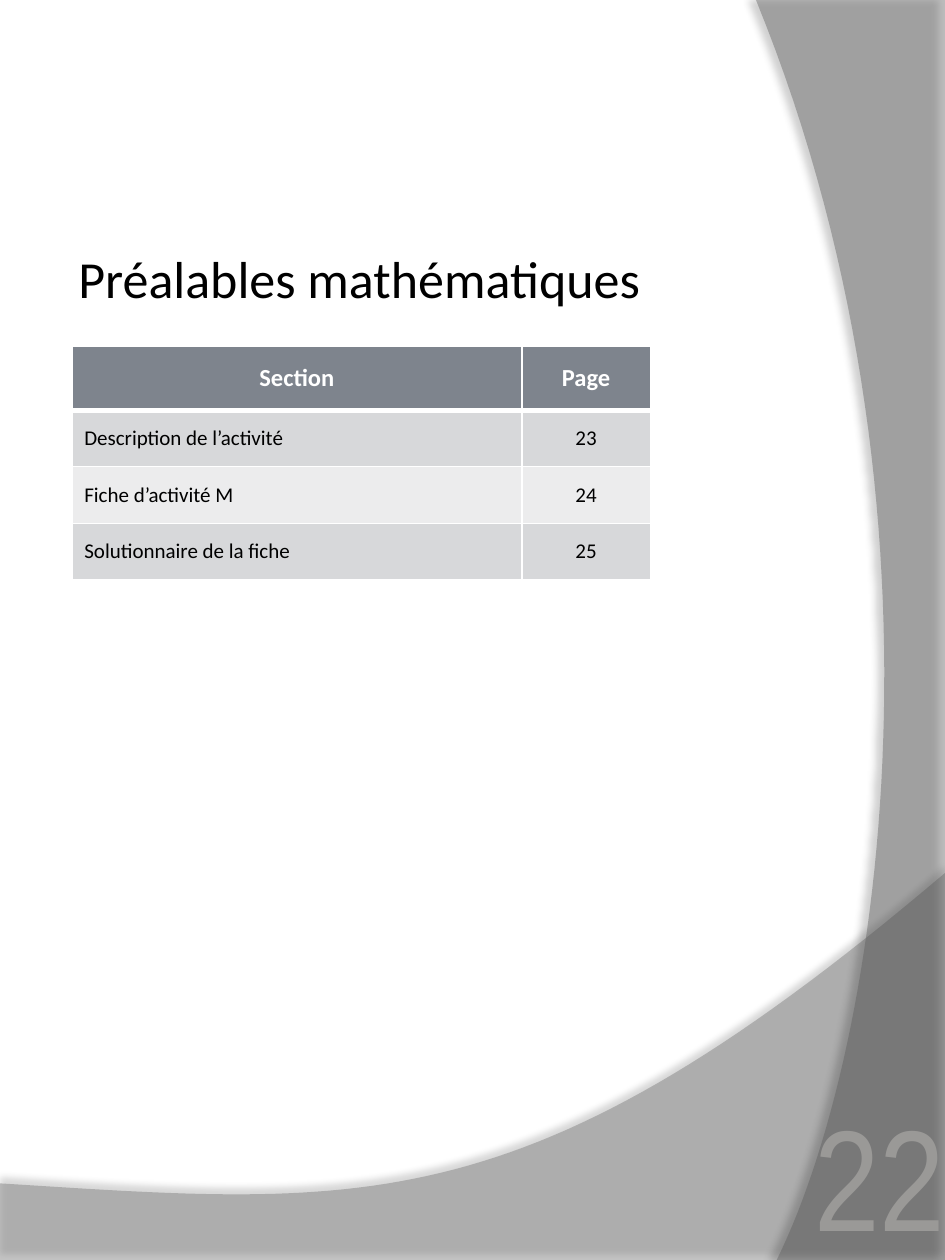
from dataclasses import dataclass

from lxml import etree
from pptx import Presentation
from pptx.dml.color import RGBColor
from pptx.enum.text import MSO_ANCHOR as Anchor, PP_ALIGN as Align
from pptx.oxml.ns import qn
from pptx.util import Cm, Pt


@dataclass(frozen=True)
class Theme:
    bottom_wave: str = "7B7B7B"
    side_wave: str = "5A5A5A"
    shadow: str = "000000"
    text: str = "000000"
    header_text: str = "FFFFFF"
    header_fill: str = "7E848D"
    bands: tuple = ("D7D8DA", "ECECED")
    border: str = "FFFFFF"
    page_number: str = "9A9997"
    font: str = "Calibri"
    number_font: str = "Arial Narrow"
    title_size: float = 29.7
    header_size: float = 14
    body_size: float = 12
    number_size: float = 82


THEME = Theme()
CURVE_STEPS = 60
SECTIONS = [
    ("Section", "Page"),
    ("Description de l’activité", "23"),
    ("Fiche d’activité M", "24"),
    ("Solutionnaire de la fiche", "25"),
]


def add_color(parent, color, opacity=100):
    srgb = etree.SubElement(parent, qn("a:srgbClr"), val=color)
    if opacity < 100:
        etree.SubElement(srgb, qn("a:alpha"), val=str(opacity * 1000))


def style_text(paragraph, size, color, font=THEME.font, bold=False, align=Align.LEFT):
    paragraph.alignment = align
    for run in paragraph.runs:
        run.font.name = font
        run.font.size = Pt(size)
        run.font.bold = bold
        run.font.color.rgb = RGBColor.from_string(color)


def set_insets(frame, horizontal, vertical):
    frame.margin_left = frame.margin_right = Cm(horizontal)
    frame.margin_top = frame.margin_bottom = Cm(vertical)


def bezier(start, control_1, control_2, end):
    for step in range(1, CURVE_STEPS + 1):
        t = step / CURVE_STEPS
        weights = ((1 - t) ** 3, 3 * t * (1 - t) ** 2, 3 * t * t * (1 - t), t ** 3)
        corners = (start, control_1, control_2, end)
        yield tuple(sum(w * c[axis] for w, c in zip(weights, corners)) for axis in (0, 1))


def add_wave(slide, box, edges, curve, color, opacity, shadow):
    left, top, width, height = box
    outline = [
        (Cm(left + x * width), Cm(top + y * height))
        for x, y in [*edges, *bezier(edges[-1], *curve)]
    ]
    builder = slide.shapes.build_freeform(*outline[0])
    builder.add_line_segments(outline[1:], close=True)
    wave = builder.convert_to_shape()
    wave.fill.solid()
    wave.fill.fore_color.rgb = RGBColor.from_string(color)
    fill_color = wave.fill._xPr.find(qn("a:solidFill"))[0]
    etree.SubElement(fill_color, qn("a:alpha"), val=str(opacity * 1000))
    wave.line.fill.background()
    wave.shadow.inherit = False

    shadow_opacity, distance, angle = shadow
    effects = wave._element.spPr.find(qn("a:effectLst"))
    outer = etree.SubElement(
        effects, qn("a:outerShdw"), blurRad=str(Pt(4)), dist=str(Pt(distance)),
        dir=str(angle * 60000), algn="ctr", rotWithShape="0",
    )
    add_color(outer, THEME.shadow, shadow_opacity)


def add_background(slide, box):
    left, top, width, height = box
    add_wave(
        slide, (left, top + 17.6, width, height - 17.58),
        edges=[(0, 0.8), (0, 1), (1, 1), (1, 0)],
        curve=[(0.56, 0.91), (0.39, 0.86), (0, 0.8)],
        color=THEME.bottom_wave, opacity=45, shadow=(35, 3.5, 270),
    )
    add_wave(
        slide, (left + width - 3.81, top, 3.81, height),
        edges=[(1, 0), (1, 1), (0.11, 1)],
        curve=[(0.67, 0.83), (1.09, 0.4), (0, 0)],
        color=THEME.side_wave, opacity=40, shadow=(45, 4, 180),
    )


def place_title(slide, box):
    title = slide.shapes.title
    title.left, title.top, title.width, title.height = map(Cm, box)
    frame = title.text_frame
    frame.text = "Préalables mathématiques"
    frame.word_wrap = True
    frame.vertical_anchor = Anchor.MIDDLE
    set_insets(frame, 0.13, 0.13)
    style_text(frame.paragraphs[0], THEME.title_size, THEME.text)


def set_borders(cell, widths):
    properties = cell._tc.get_or_add_tcPr()
    for position, (side, width) in enumerate(widths.items()):
        line = etree.Element(qn(f"a:ln{side}"), w=str(Pt(width)))
        add_color(etree.SubElement(line, qn("a:solidFill")), THEME.border)
        properties.insert(position, line)


def add_contents(slide, box):
    page_width, header_height = 2.59, 1.3
    left, top, width, height = box
    contents = slide.shapes.add_table(len(SECTIONS), 2, *map(Cm, box)).table
    contents.columns[0].width = Cm(width - page_width)
    contents.columns[1].width = Cm(page_width)
    body_height = (height - header_height) / (len(SECTIONS) - 1)
    for row, entry in enumerate(SECTIONS):
        header = row == 0
        contents.rows[row].height = Cm(header_height if header else body_height)
        fill = THEME.header_fill if header else THEME.bands[(row - 1) % 2]
        for column, wording in enumerate(entry):
            cell = contents.cell(row, column)
            cell.text = wording
            cell.vertical_anchor = Anchor.MIDDLE
            set_insets(cell, 0.25, 0.13)
            cell.fill.solid()
            cell.fill.fore_color.rgb = RGBColor.from_string(fill)
            set_borders(cell, {"L": 1, "R": 1, "T": 3 if row == 1 else 1, "B": 3 if header else 1})
            style_text(
                cell.text_frame.paragraphs[0],
                THEME.header_size if header else THEME.body_size,
                THEME.header_text if header else THEME.text,
                bold=header,
                align=Align.CENTER if header or column == 1 else Align.LEFT,
            )


def add_page_number(slide, box):
    frame = slide.shapes.add_textbox(*map(Cm, box)).text_frame
    frame.text = "22"
    frame.word_wrap = True
    frame.vertical_anchor = Anchor.BOTTOM
    set_insets(frame, 0, 0)
    style_text(
        frame.paragraphs[0], THEME.number_size, THEME.page_number,
        font=THEME.number_font, align=Align.RIGHT,
    )


def main():
    deck = Presentation()
    deck.slide_width, deck.slide_height = Cm(19.05), Cm(25.4)
    slide = deck.slides.add_slide(deck.slide_layouts[5])
    add_background(slide, (0, 0, 19.05, 25.4))
    place_title(slide, (1.45, 3.76, 14, 3.66))
    add_contents(slide, (1.45, 6.97, 11.66, 4.72))
    add_page_number(slide, (15.95, 22.25, 3.1, 3.15))
    deck.save("out.pptx")


if __name__ == "__main__":
    main()
